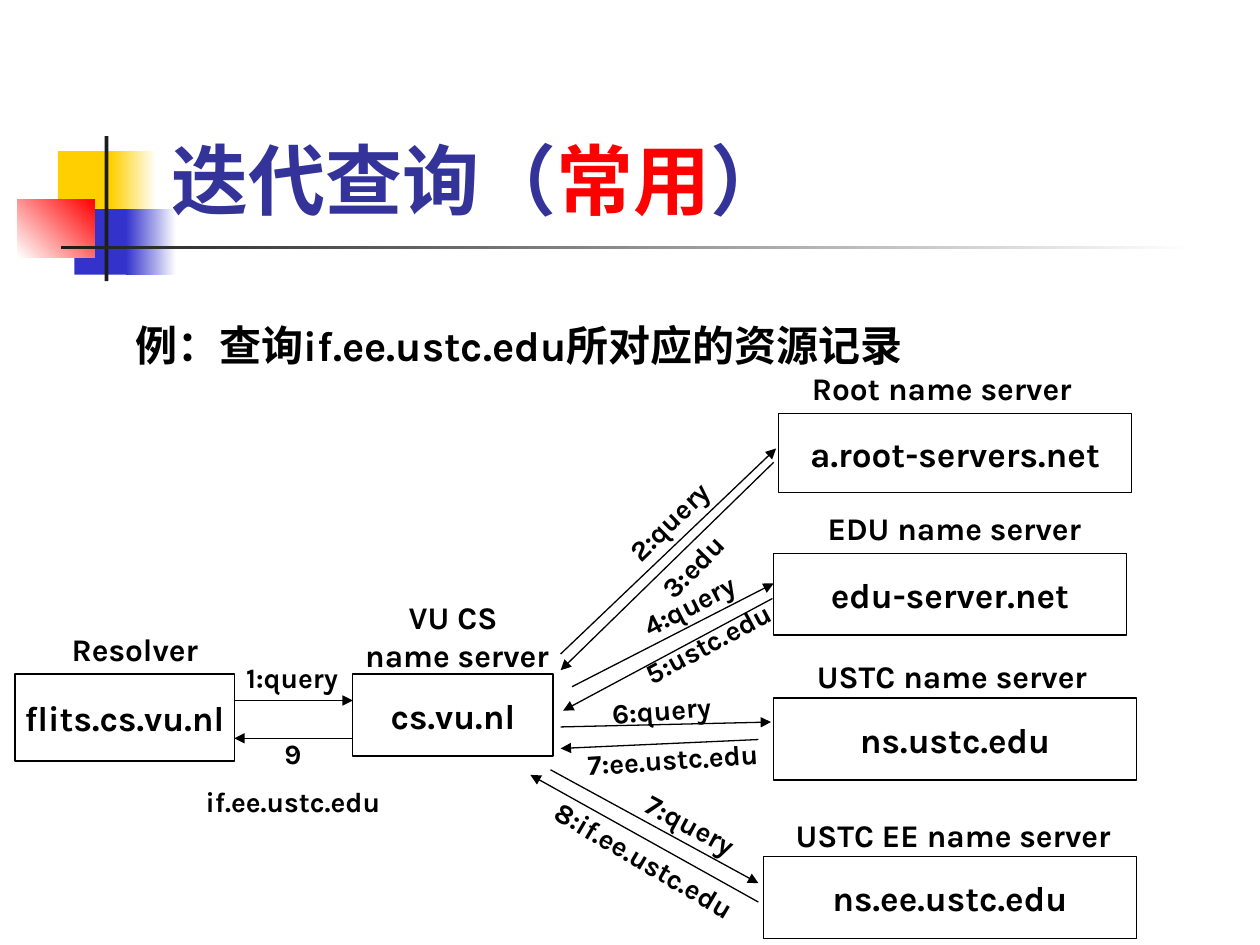
from pptx import Presentation
from pptx.dml.color import RGBColor
from pptx.enum import shapes, text
from pptx.oxml import parse_xml
from pptx.oxml.ns import nsdecls
from pptx.util import Pt

FONT = "Karla"
BLACK = RGBColor(0, 0, 0)
WHITE = RGBColor(255, 255, 255)
RED = RGBColor(255, 0, 0)
YELLOW = RGBColor(0xFF, 0xCF, 0x01)
BLUE = RGBColor(0x33, 0x33, 0xCC)
NAVY = RGBColor(0x33, 0x33, 0x99)
DARK = RGBColor(0x1C, 0x1C, 0x1C)

TITLE = [("迭代查询（", NAVY), ("常用", RED), ("）", NAVY)]
EXAMPLE = "例：查询if.ee.ustc.edu所对应的资源记录"

# DECOR_PLACEHOLDER
DECOR = [
    ((33.1, 86.4, 34.6, 37.4), [YELLOW], 0),
    ((63.4, 86.4, 25.9, 37.4), [YELLOW, WHITE], 0),
    ((42.5, 119.5, 33.1, 37.4), [BLUE], 0),
    ((72, 119.5, 28.8, 37.4), [BLUE, WHITE], 0),
    ((10.1, 113.8, 43.9, 33.1), [WHITE, RED], 45),
    ((59.8, 77.8, 2.2, 82.8), [DARK], 0),
    ((34.6, 140.4, 648, 2.2), [DARK, WHITE], 0),
]

SERVERS = [
    ("flits.cs.vu.nl", (8.6, 385.2, 125.3, 49.7), "Resolver", (14.4, 356.4, 125.3, 28.8)),
    ("cs.vu.nl", (201.6, 385.2, 114.5, 46.8), "VU CS\v name server", (185.8, 338.4, 146.2, 51.1)),
    ("a.root-servers.net", (445, 236.2, 201.6, 45.4), "Root name server", (433.4, 207.4, 209.5, 28.8)),
    ("edu-server.net", (442.1, 316.1, 201.6, 46.8), "EDU name server", (442.1, 287.3, 206.6, 28.8)),
    ("ns.ustc.edu", (442.1, 398.9, 207.4, 46.8), "USTC name server", (439.2, 372.2, 209.5, 28.8)),
    ("ns.ee.ustc.edu", (436.3, 489.6, 213.1, 46.8), "USTC EE name server", (422.6, 463, 244.1, 28.8)),
]

MESSAGES = [
    (["1:query"], (133.9, 400.3), (201.6, 400.3), (127.4, 373.7, 79.2, 26.6), 0),
    (["9", "if.ee.ustc.edu"], (201.6, 421.9), (133.9, 421.9), (93.6, 417.6, 147.6, 55.4), 0),
    (["2:query"], (320.4, 373.7), (443.5, 256.3), (334.8, 284.4, 95, 26.6), 315.7),
    (["3:edu"], (442.1, 264.2), (320.4, 383), (344.2, 310.3, 103.7, 26.6), 314.2),
    (["4:query"], (326.9, 392.4), (442.1, 333.4), (344.2, 332.6, 99.4, 26.6), 332.9),
    (["5:ustc.edu"], (441.4, 342), (321.8, 406.1), (341.3, 354.2, 126.7, 26.6), 331.8),
    (["6:query"], (320.4, 415.4), (440.6, 412.6), (326.9, 392.4, 102.2, 26.6), 355.7),
    (["7:ee.ustc.edu"], (433.4, 422.6), (320.4, 427.7), (319, 420.5, 131, 26.6), 356.3),
    (["7:query"], (314.6, 439.9), (433.4, 504.7), (334.8, 457.9, 120.2, 26.6), 28.2),
    (["8:if.ee.ustc.edu"], (433.4, 515.5), (303.1, 442.8), (267.8, 478.1, 200.9, 26.6), 30.4),
]

prs = Presentation()
prs.slide_width, prs.slide_height = Pt(720), Pt(540)
slide = prs.slides.add_slide(prs.slide_layouts[6])


def points(values):
    return [Pt(value) for value in values]


def write(shape, paragraphs, size, align=text.PP_ALIGN.CENTER,
          anchor=text.MSO_ANCHOR.TOP, wrap=True, gap=0):
    frame = shape.text_frame
    frame.word_wrap = wrap
    frame.vertical_anchor = anchor
    for i, runs in enumerate(paragraphs):
        paragraph = frame.add_paragraph() if i else frame.paragraphs[0]
        paragraph.alignment = align
        if i:
            paragraph.space_before = Pt(gap)
        for words, color in runs:
            for j, line in enumerate(words.split("\v")):
                if j:
                    paragraph.add_line_break()
                run = paragraph.add_run()
                run.text = line
                run.font.name = FONT
                run.font.size = Pt(size)
                run.font.bold = True
                run.font.color.rgb = color


def label(box, paragraphs, size, rotation=0, **style):
    area = slide.shapes.add_textbox(*points(box))
    area.rotation = rotation
    write(area, paragraphs, size, **style)


def rectangle(box):
    rect = slide.shapes.add_shape(shapes.MSO_SHAPE.RECTANGLE, *points(box))
    rect.shadow.inherit = False
    return rect


def arrow(start, end):
    link = slide.shapes.add_connector(shapes.MSO_CONNECTOR.STRAIGHT, *points(start + end))
    link.line.color.rgb = BLACK
    link.line.width = Pt(0.75)
    link.line._get_or_add_ln().append(parse_xml(f'<a:tailEnd {nsdecls("a")} type="triangle"/>'))
    link._element.spPr.append(parse_xml(f'<a:effectLst {nsdecls("a")}/>'))


for box, colors, angle in DECOR:
    block = rectangle(box)
    block.line.fill.background()
    if len(colors) == 1:
        block.fill.solid()
        block.fill.fore_color.rgb = colors[0]
    else:
        block.fill.gradient()
        block.fill.gradient_angle = angle
        for stop, color in zip(block.fill.gradient_stops, colors):
            stop.color.rgb = color

label((90.7, 16.6, 613.4, 115.2), [TITLE], 44,
      align=text.PP_ALIGN.LEFT, anchor=text.MSO_ANCHOR.BOTTOM)
label((70.6, 179.3, 466.6, 36), [[(EXAMPLE, BLACK)]], 24,
      align=text.PP_ALIGN.LEFT, wrap=False)

for host, box, role, role_box in SERVERS:
    server = rectangle(box)
    server.fill.solid()
    server.fill.fore_color.rgb = WHITE
    server.line.color.rgb = BLACK
    server.line.width = Pt(0.75)
    write(server, [[(host, BLACK)]], 20, anchor=text.MSO_ANCHOR.MIDDLE, wrap=False)
    label(role_box, [[(role, BLACK)]], 18)

for lines, start, end, box, rotation in MESSAGES:
    arrow(start, end)
    label(box, [[(line, BLACK)] for line in lines], 16, rotation=rotation, gap=8)

prs.save("out.pptx")
